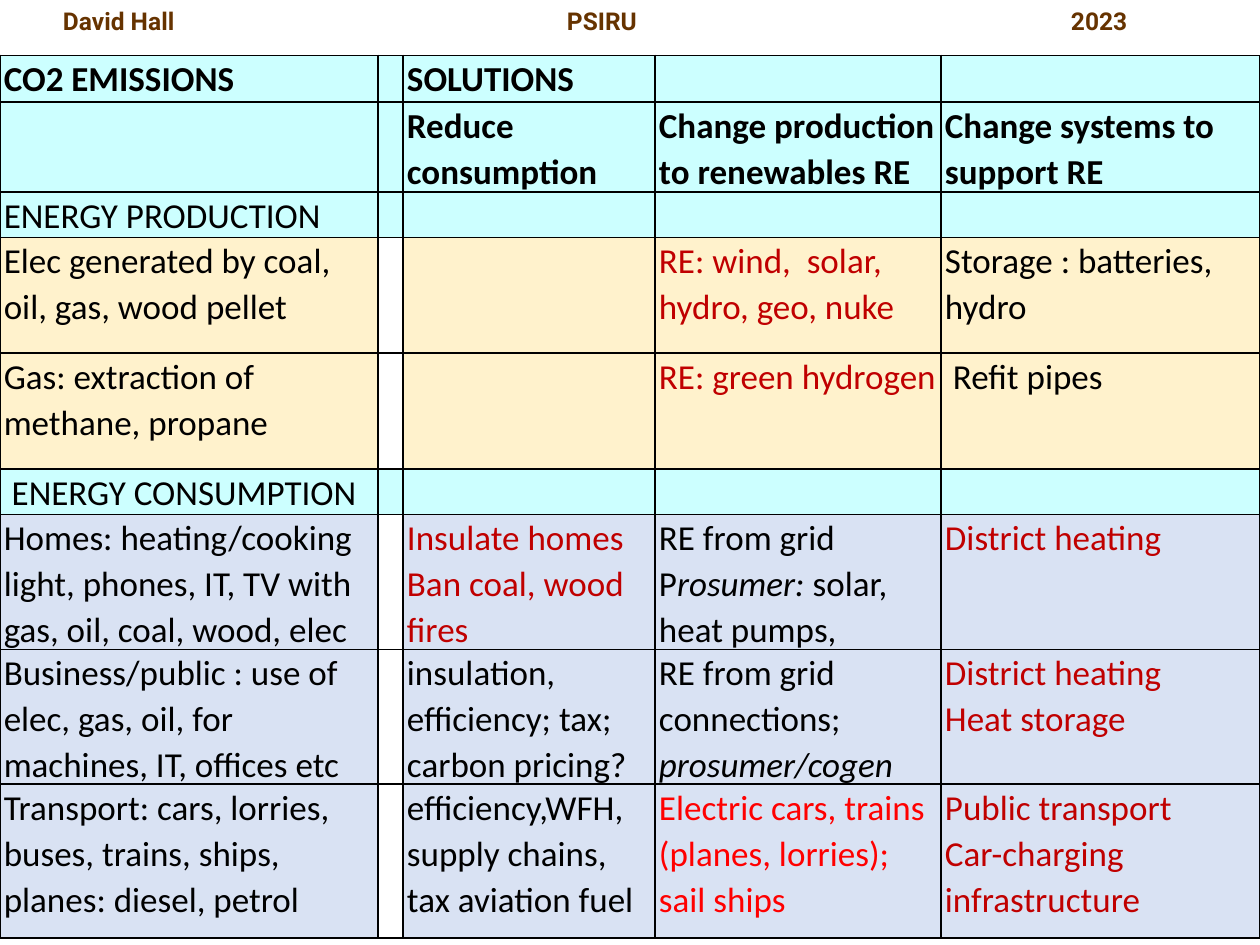
import pptx
import pptx.util
import pptx.dml.color
import pptx.enum.text
import pptx.oxml
import pptx.oxml.ns

Inches = pptx.util.Inches
Pt = pptx.util.Pt

THEME = {
    "head": "CCFFFF", "production": "FFF2CC", "consumption": "D9E2F3", "gap": "FFFFFF",
    "ink": "000000", "key": "C00000", "alert": "FF0000", "credit": "663300",
    "body_font": "Calibri", "credit_font": "Roboto",
    "body_size": 20, "credit_size": 14, "empty_size": 8, "border": 1,
}

CREDITS = ["David Hall", "PSIRU", "2023"]
CREDIT_LEFT, CREDIT_STEP = 0.5, 4

COLUMN_WIDTHS = [3, 0.2, 2, 2.27, 2.53]
GAP_COLUMN = 1
TABLE_TOP = 0.44

ROWS = [
    ("head", 0.37, True, ["CO2 EMISSIONS", "", "SOLUTIONS", "", ""]),
    ("head", 0.71, True, ["", "", "Reduce consumption", "Change production to renewables RE",
                          "Change systems to support RE"]),
    ("head", 0.36, False, ["ENERGY PRODUCTION", "", "", "", ""]),
    ("production", 0.92, False, ["Elec generated by coal, oil, gas, wood pellet", "", "",
                                 ("key", "RE: wind,  solar, hydro, geo, nuke"),
                                 "Storage : batteries, hydro"]),
    ("production", 0.92, False, ["Gas: extraction of methane, propane", "", "",
                                 ("key", "RE: green hydrogen"), " Refit pipes"]),
    ("head", 0.36, False, [" ENERGY CONSUMPTION", "", "", "", ""]),
    ("consumption", 1.07, False, ["Homes: heating/cooking light, phones, IT, TV with gas, oil, coal, wood, elec",
                                  "", ("key", "Insulate homes\nBan coal, wood fires"),
                                  "RE from grid\nP*rosumer:* solar, heat pumps,",
                                  ("key", "District heating")]),
    ("consumption", 1.07, False, ["Business/public : use of elec, gas, oil, for machines, IT, offices etc",
                                  "", "insulation, efficiency; tax; carbon pricing?",
                                  "RE from grid connections;\n*prosumer/cogen*",
                                  ("key", "District heating\nHeat storage")]),
    ("consumption", 1.22, False, ["Transport: cars, lorries, buses, trains, ships, planes: diesel, petrol",
                                  "", "efficiency,WFH, supply chains,  tax aviation fuel",
                                  ("alert", "Electric cars, trains (planes, lorries); sail ships"),
                                  ("key", "Public transport\nCar-charging infrastructure")]),
]


def rgb(role):
    return pptx.dml.color.RGBColor.from_string(THEME[role])


def write(frame, text, *, font="body_font", size="body_size", color="ink", bold=False, spacing=1.07):
    for index, line in enumerate(text.split("\n")):
        paragraph = frame.paragraphs[0] if index == 0 else frame.add_paragraph()
        paragraph.alignment = pptx.enum.text.PP_ALIGN.LEFT
        paragraph.line_spacing = spacing
        paragraph.font.size = Pt(THEME[size])
        for part, words in enumerate(line.split("*")):
            if words:
                run = paragraph.add_run()
                run.text = words
                run.font.name = THEME[font]
                run.font.size = Pt(THEME[size])
                run.font.bold = bold
                run.font.italic = part % 2 == 1
                run.font.color.rgb = rgb(color)


def add_borders(cell):
    properties = cell._tc.get_or_add_tcPr()
    for side in ("lnL", "lnR", "lnT", "lnB"):
        properties.append(pptx.oxml.parse_xml(
            f'<a:{side} {pptx.oxml.ns.nsdecls("a")} w="{Pt(THEME["border"])}">'
            f'<a:solidFill><a:srgbClr val="{THEME["ink"]}"/></a:solidFill></a:{side}>'))


def add_credits(slide):
    credits = slide.shapes.add_textbox(0, 0, Inches(10), Inches(0.34))
    frame = credits.text_frame
    frame.word_wrap = True
    frame.margin_left = Inches(CREDIT_LEFT)
    write(frame, "\t".join(CREDITS), font="credit_font", size="credit_size",
          color="credit", bold=True, spacing=1.0)
    stops = "".join(f'<a:tab pos="{Inches(CREDIT_STEP * n)}" algn="l"/>' for n in range(1, len(CREDITS)))
    tabs = pptx.oxml.parse_xml(f'<a:tabLst {pptx.oxml.ns.nsdecls("a")}>{stops}</a:tabLst>')
    properties = frame.paragraphs[0]._p.get_or_add_pPr()
    properties.insert_element_before(tabs, "a:defRPr", "a:extLst")


def add_solutions(slide):
    heights = [row[1] for row in ROWS]
    solutions = slide.shapes.add_table(len(ROWS), len(COLUMN_WIDTHS), 0, Inches(TABLE_TOP),
                                       Inches(sum(COLUMN_WIDTHS)), Inches(sum(heights))).table
    solutions.first_row = False
    solutions.horz_banding = False
    for column, width in zip(solutions.columns, COLUMN_WIDTHS):
        column.width = Inches(width)
    for r, (section, height, bold, entries) in enumerate(ROWS):
        solutions.rows[r].height = Inches(height)
        for c, entry in enumerate(entries):
            color, text = entry if isinstance(entry, tuple) else ("ink", entry)
            cell = solutions.cell(r, c)
            cell.margin_left = cell.margin_right = Inches(0.03)
            cell.margin_top = cell.margin_bottom = 0
            add_borders(cell)
            cell.fill.solid()
            cell.fill.fore_color.rgb = rgb("gap" if c == GAP_COLUMN and section != "head" else section)
            write(cell.text_frame, text, color=color, bold=bold,
                  size="body_size" if text else "empty_size")


def main():
    deck = pptx.Presentation()
    deck.slide_width, deck.slide_height = Inches(10), Inches(7.5)
    slide = deck.slides.add_slide(deck.slide_layouts[6])
    add_credits(slide)
    add_solutions(slide)
    deck.save("out.pptx")


if __name__ == "__main__":
    main()
